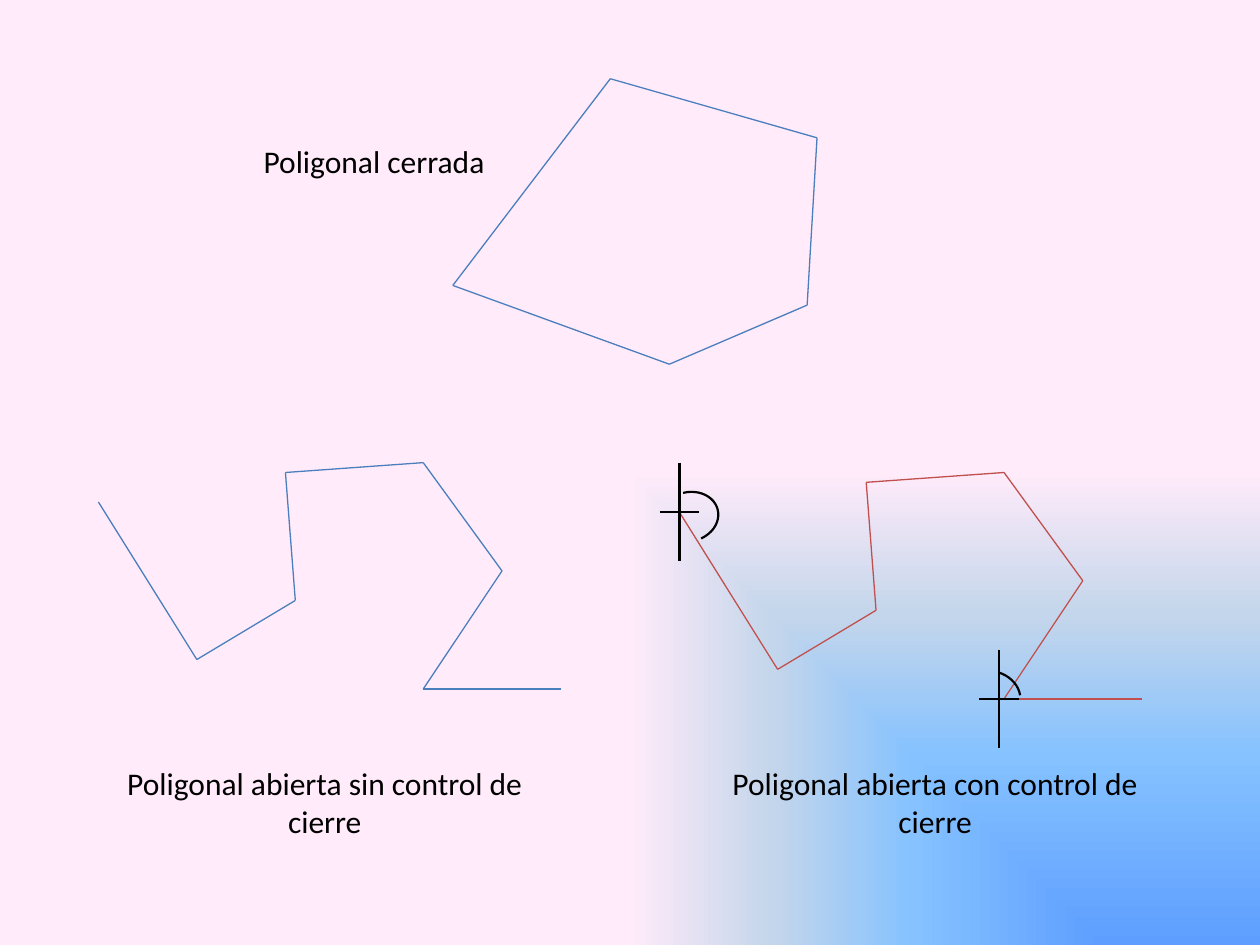
from itertools import pairwise

from lxml import etree
from pptx import Presentation
from pptx.dml.color import RGBColor
from pptx.enum.shapes import MSO_CONNECTOR, MSO_SHAPE
from pptx.enum.text import MSO_AUTO_SIZE, PP_ALIGN
from pptx.oxml import parse_xml
from pptx.oxml.ns import qn
from pptx.util import Inches, Pt

STRAIGHT = MSO_CONNECTOR.STRAIGHT
ARC = MSO_SHAPE.ARC
CENTER = PP_ALIGN.CENTER
GROW = MSO_AUTO_SIZE.SHAPE_TO_FIT_TEXT

BLUE = RGBColor(0x4B, 0x7E, 0xBC)
RED = RGBColor(0xC0, 0x50, 0x4D)
BLACK = RGBColor(0x00, 0x00, 0x00)
GRADIENT = {0: "5E9EFF", 40: "85C2FF", 70: "C4D6EB", 100: "FFEBFA"}

deck = Presentation()
deck.slide_width, deck.slide_height = Inches(10), Inches(7.5)
page = deck.slides.add_slide(deck.slide_layouts[6])
CELL = deck.slide_width / 128  # the slide is a grid of 128 columns and 96 rows


def grid(*cells):
    return [round(cell * CELL) for cell in cells]


def draw_lines(segments, color, width):
    """Draw the segments as one group of straight connectors."""
    group = page.shapes.add_group_shape()
    for start, end in segments:
        line = group.shapes.add_connector(STRAIGHT, *grid(*start, *end))
        line.line.color.rgb = color
        line.line.width = Pt(width)
        etree.SubElement(line._element.spPr, qn("a:effectLst"))


# Background: gradient spreading from the bottom right corner
page.background.fill.gradient()
old_fill = page.background._cSld.find(".//" + qn("a:gradFill"))
stops = "".join(
    f'<a:gs pos="{share * 1000}"><a:srgbClr val="{color}"/></a:gs>'
    for share, color in GRADIENT.items()
)
new_fill = parse_xml(
    '<a:gradFill xmlns:a="http://schemas.openxmlformats.org/drawingml/2006/main">'
    f'<a:gsLst>{stops}</a:gsLst>'
    '<a:path path="rect"><a:fillToRect l="100000" t="100000"/></a:path>'
    '<a:tileRect r="-100000" b="-100000"/></a:gradFill>'
)
old_fill.getparent().replace(old_fill, new_fill)

# Traverses: the controlled one is the open one, shifted
closed = [(62, 8), (46, 29), (68, 37), (82, 31), (83, 14), (62, 8)]
opened = [(10, 51), (20, 67), (30, 61), (29, 48), (43, 47), (51, 58), (43, 70), (57, 70)]
controlled = [(column + 59, row + 1) for column, row in opened]
for points, color in ((closed, BLUE), (opened, BLUE), (controlled, RED)):
    draw_lines(pairwise(points), color, 0.75)

# Control stations: a cross and the arc of its measured angle
stations = [
    # column, row, arc left, arc top, rotation, arc end
    (69, 52, 67, 50, 346.1, 44.82),
    (101.5, 71, 97.7, 68.2, 17.3, 204.87),
]
for column, row, left, top, rotation, arc_end in stations:
    cross = [
        ((column, row - 5), (column, row + 5)),
        ((column - 2, row), (column + 2, row)),
    ]
    draw_lines(cross, BLACK, 1.5)
    angle = page.shapes.add_shape(ARC, *grid(left, top, 6, 5))
    angle.adjustments[0], angle.adjustments[1] = 162, arc_end
    angle.rotation = rotation
    angle.shadow.inherit = False
    angle.fill.background()
    angle.line.color.rgb = BLACK
    angle.line.width = Pt(1.25)

# Captions
captions = [
    ("Poligonal cerrada", 15, 13.8, 5.2),
    ("Poligonal abierta sin control de cierre", 10, 77, 9),
    ("Poligonal abierta con control de cierre", 72, 77, 9),
]
for text, left, top, height in captions:
    box = page.shapes.add_textbox(*grid(left, top, 46, height))
    box.text_frame.word_wrap = True
    box.text_frame.auto_size = GROW
    para = box.text_frame.paragraphs[0]
    para.alignment = CENTER
    span = para.add_run()
    span.text = text
    for name, value in {"name": "Calibri", "size": Pt(18)}.items():
        setattr(span.font, name, value)
    span.font.color.rgb = BLACK

deck.save("out.pptx")
